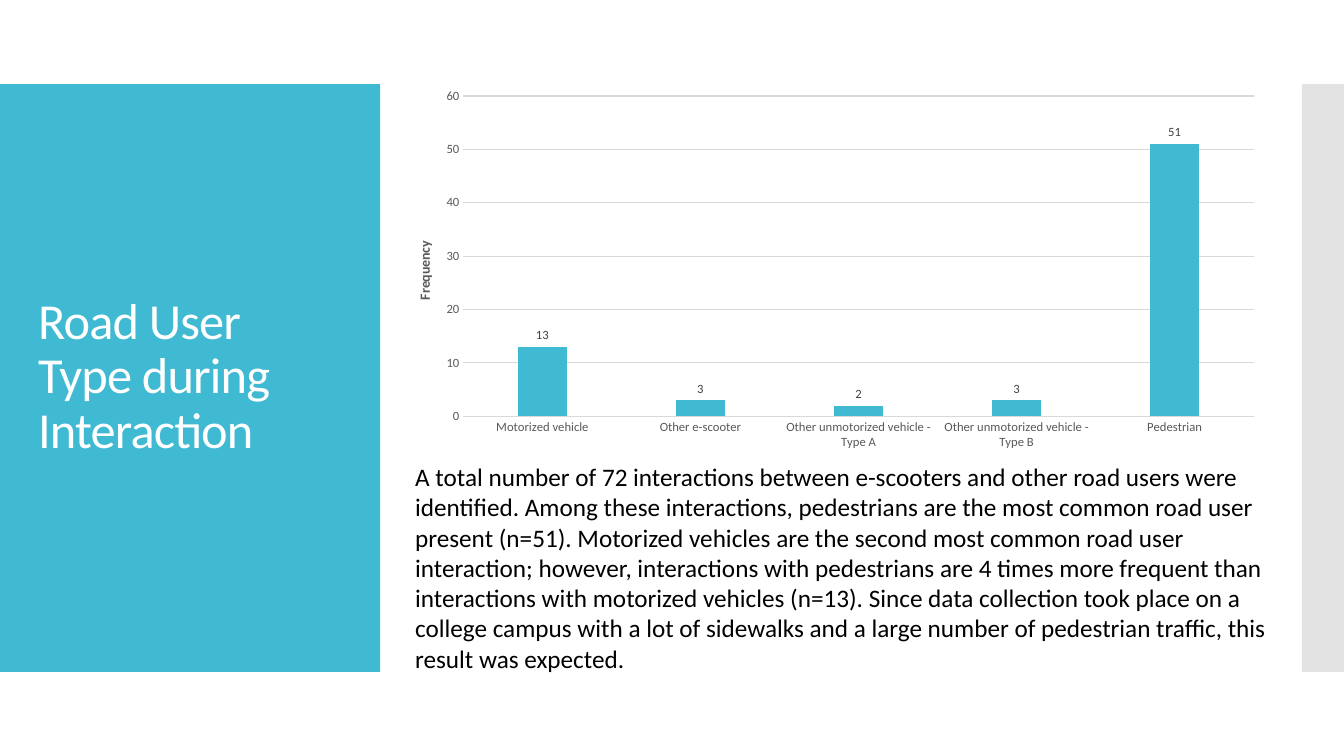
from lxml import etree
from pptx import Presentation
from pptx import util as u
from pptx.chart import data as chart_data
from pptx.dml import color
from pptx.enum import chart as chart_enum, shapes, text
from pptx.oxml import ns

COLUMNS, ROWS = 32, 18
COLORS = {
    "accent": "40BAD2",
    "edge": "C8C8C8",
    "grid": "D9D9D9",
    "axis": "595959",
    "label": "404040",
    "white": "FFFFFF",
    "black": "000000",
}
TITLE = "Road User Type during Interaction"
SUMMARY = (
    "A total number of 72 interactions between e-scooters and other road users were "
    "identified. Among these interactions, pedestrians are the most common road user "
    "present (n=51). Motorized vehicles are the second most common road user "
    "interaction; however, interactions with pedestrians are 4 times more frequent than "
    "interactions with motorized vehicles (n=13). Since data collection took place on a "
    "college campus with a lot of sidewalks and a large number of pedestrian traffic, "
    "this result was expected."
)
ROAD_USERS = {
    "Motorized vehicle": 13,
    "Other e-scooter": 3,
    "Other unmotorized vehicle - Type A": 2,
    "Other unmotorized vehicle - Type B": 3,
    "Pedestrian": 51,
}


def rgb(name):
    return color.RGBColor.from_string(COLORS[name])


def set_layout(parent, index, **shares):
    """Place a chart part by shares of the chart's size."""
    layout = parent.find(ns.qn("c:layout"))
    if layout is None:
        layout = etree.Element(ns.qn("c:layout"))
        parent.insert(index, layout)
    manual = etree.SubElement(layout, ns.qn("c:manualLayout"))
    values = {"xMode": "edge", "yMode": "edge", **shares}
    if "w" in shares:
        values = {"layoutTarget": "inner", **values}
    for tag, value in values.items():
        etree.SubElement(manual, ns.qn(f"c:{tag}")).set("val", str(value))


class SlideBuilder:
    """Draws on one slide; lengths are columns and rows of a 32 by 18 grid."""

    font = "Calibri"

    def __init__(self, presentation):
        self.column = presentation.slide_width / COLUMNS
        self.row = presentation.slide_height / ROWS
        self.slide = presentation.slides.add_slide(presentation.slide_layouts[6])

    def place(self, left, top, width, height):
        return (round(left * self.column), round(top * self.row),
                round(width * self.column), round(height * self.row))

    def style(self, font, size, color_name):
        font.name = self.font
        font.size = u.Pt(size)
        font.color.rgb = rgb(color_name)

    def panel(self, *box, fill, opacity=100):
        shape = self.slide.shapes.add_shape(
            shapes.MSO_SHAPE.RECTANGLE, *self.place(*box))
        shape.shadow.inherit = False
        shape.fill.solid()
        shape.fill.fore_color.rgb = rgb(fill)
        shape.line.fill.background()
        if opacity < 100:
            fill_color = shape.fill._xPr.find(".//" + ns.qn("a:srgbClr"))
            alpha = etree.SubElement(fill_color, ns.qn("a:alpha"))
            alpha.set("val", str(opacity * 1000))

    def text(self, *box, content, size, color_name,
             anchor=text.MSO_ANCHOR.TOP, line_spacing=1.0, tracking=0):
        shape = self.slide.shapes.add_textbox(*self.place(*box))
        frame = shape.text_frame
        frame.word_wrap = True
        frame.vertical_anchor = anchor
        frame.text = content
        paragraph = frame.paragraphs[0]
        paragraph.line_spacing = line_spacing
        run = paragraph.runs[0]
        self.style(run.font, size, color_name)
        if tracking:
            run._r.get_or_add_rPr().set("spc", str(round(tracking * 100)))

    def column_chart(self, *box, values, axis_title):
        data = chart_data.CategoryChartData()
        data.categories = list(values)
        data.add_series("Series 1", list(values.values()))
        chart = self.slide.shapes.add_chart(
            chart_enum.XL_CHART_TYPE.COLUMN_CLUSTERED, *self.place(*box), data).chart
        chart.has_legend = chart.has_title = False
        self.style(chart.font, 10, "black")

        plot = chart.plots[0]
        plot.vary_by_categories = False
        plot.gap_width, plot.overlap = 219, -27
        bars = plot.series[0]
        bars.format.fill.solid()
        bars.format.fill.fore_color.rgb = rgb("accent")
        labels = bars.data_labels
        labels.show_value = True
        labels.position = chart_enum.XL_LABEL_POSITION.OUTSIDE_END
        self.style(labels.font, 9, "label")

        for axis in (chart.category_axis, chart.value_axis):
            axis.major_tick_mark = chart_enum.XL_TICK_MARK.NONE
            axis.minor_tick_mark = chart_enum.XL_TICK_MARK.NONE
            self.style(axis.tick_labels.font, 9, "axis")
        chart.category_axis.has_major_gridlines = False
        chart.value_axis.has_major_gridlines = True
        chart.value_axis.minimum_scale = 0
        chart.value_axis.maximum_scale = 60
        chart.value_axis.major_unit = 10
        chart.value_axis.format.line.fill.background()
        for line in (chart.category_axis.format.line,
                     chart.value_axis.major_gridlines.format.line):
            line.color.rgb = rgb("grid")
            line.width = u.Pt(0.75)

        title = chart.value_axis.axis_title
        title.text_frame.text = axis_title
        self.style(title.text_frame.paragraphs[0].runs[0].font, 10, "axis")
        set_layout(title._element, 1, x=0.03, y=0.42)
        plot_area = chart._chartSpace.find(".//" + ns.qn("c:plotArea"))
        set_layout(plot_area, 0, x=0.087, y=0.041, w=0.894, h=0.852)


def main():
    presentation = Presentation()
    presentation.slide_width = u.Inches(13.33)
    presentation.slide_height = u.Inches(7.5)
    builder = SlideBuilder(presentation)
    builder.panel(0, 2, 9.05, 14, fill="accent")
    builder.panel(31, 2, 1, 14, fill="edge", opacity=50)
    builder.text(0.67, 2.95, 7.73, 12.07, content=TITLE, size=36, color_name="white",
                 anchor=text.MSO_ANCHOR.MIDDLE, line_spacing=0.9, tracking=-0.6)
    builder.column_chart(9.2, 1.92, 21.05, 8.95, values=ROAD_USERS,
                         axis_title="Frequency")
    builder.text(9.65, 10.87, 21.39, 5.33, content=SUMMARY, size=18,
                 color_name="black")
    presentation.save("out.pptx")


if __name__ == "__main__":
    main()
